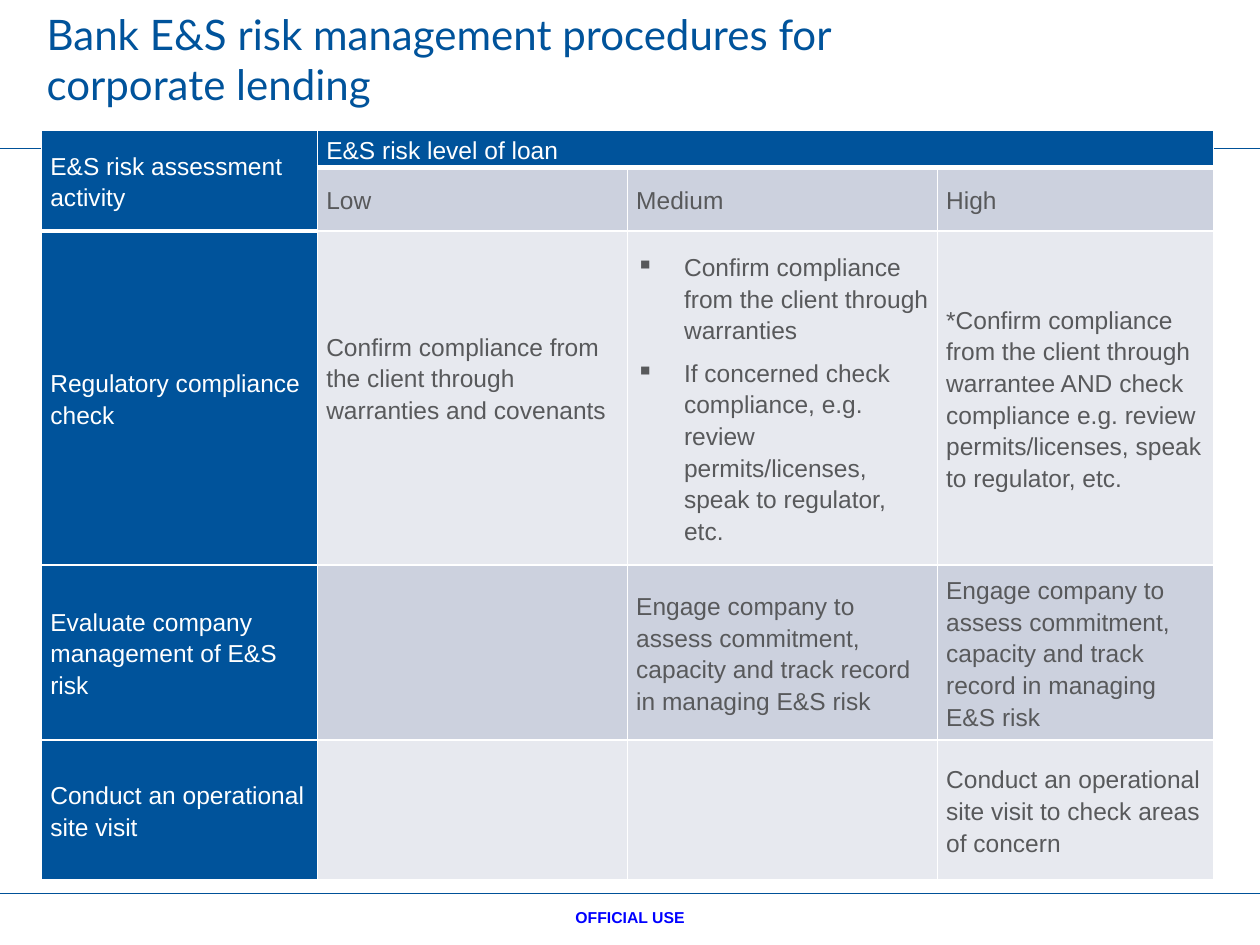
import pptx
import pptx.util
import pptx.dml.color
import pptx.enum.shapes
import pptx.enum.text
import pptx.oxml.ns
from lxml import etree

Inches, Pt = pptx.util.Inches, pptx.util.Pt
qn = pptx.oxml.ns.qn
MIDDLE = pptx.enum.text.MSO_ANCHOR.MIDDLE

BLUE, RULE, GREY, WHITE = "00539B", "005198", "58595B", "FFFFFF"
BANDS = ["CCD1DE", "E7E9EF"]
TITLE = "Bank E&S risk management procedures for corporate lending"
FOOTER = "OFFICIAL USE"
ENGAGE = "Engage company to assess commitment, capacity and track record in managing E&S risk"
ROWS = [
    ["E&S risk assessment activity", "E&S risk level of loan", "", ""],
    ["", "Low", "Medium", "High"],
    ["Regulatory compliance check",
     "Confirm compliance from the client through warranties and covenants",
     ["Confirm compliance from the client through warranties",
      "If concerned check compliance, e.g. review permits/licenses, speak to regulator, etc."],
     "*Confirm compliance from the client through warrantee AND check compliance e.g. "
     "review permits/licenses, speak to regulator, etc."],
    ["Evaluate company management of E&S risk", "", ENGAGE, ENGAGE],
    ["Conduct an operational site visit", "", "",
     "Conduct an operational site visit to check areas of concern"],
]
COL_WIDTHS = [2.19, 2.46, 2.46, 2.19]
ROW_HEIGHTS = [0.3, 0.26, 2.65, 1.39, 1.11]
RULES_Y = [1.18, 7.09]


def rgb(value):
    return pptx.dml.color.RGBColor.from_string(value)


def style_font(font, name, size, color, bold=False):
    font.name, font.size, font.bold = name, Pt(size), bold
    font.color.rgb = rgb(color)


def set_frame(tf):
    tf.word_wrap = True
    tf.vertical_anchor = MIDDLE
    tf.margin_left = tf.margin_right = tf.margin_top = tf.margin_bottom = 0


def add_rule(slide, y):
    line = slide.shapes.add_connector(
        pptx.enum.shapes.MSO_CONNECTOR.STRAIGHT, 0, Inches(y), Inches(10), Inches(y))
    line.line.color.rgb = rgb(RULE)
    line.line.width = Pt(0.25)
    etree.SubElement(line._element.spPr, qn("a:effectLst"))


def set_borders(cell, bottom):
    tcPr = cell._tc.get_or_add_tcPr()
    for side, width in (("L", 1), ("R", 1), ("T", 1), ("B", bottom)):
        ln = etree.SubElement(tcPr, qn(f"a:ln{side}"), w=str(Pt(width)))
        fill = etree.SubElement(ln, qn("a:solidFill"))
        etree.SubElement(fill, qn("a:srgbClr"), val=WHITE)


def add_bullet(p):
    pPr = p._p.get_or_add_pPr()
    pPr.set("marL", str(Inches(0.38)))
    pPr.set("indent", str(-Inches(0.38)))
    etree.SubElement(pPr, qn("a:buChar"), char="▪")


def fill_cell(cell, content, row, col):
    header = row == 0 or col == 0
    set_borders(cell, 3 if row == 0 else 1)
    cell.fill.solid()
    cell.fill.fore_color.rgb = rgb(BLUE if header else BANDS[(row + 1) % 2])
    cell.vertical_anchor = MIDDLE
    cell.margin_left = cell.margin_right = Inches(0.07)
    cell.margin_top = cell.margin_bottom = 0
    if not content:
        return
    bulleted = isinstance(content, list)
    tf = cell.text_frame
    tf.text = "\n".join(content) if bulleted else content
    for p in tf.paragraphs:
        p.line_spacing = 1.15
        p.space_after = Pt(6)
        if bulleted:
            add_bullet(p)
        for r in p.runs:
            style_font(r.font, "Arial", 14, WHITE if header else GREY)


prs = pptx.Presentation()
prs.slide_width, prs.slide_height = Inches(10), Inches(7.5)
slide = prs.slides.add_slide(prs.slide_layouts[5])

for y in RULES_Y:
    add_rule(slide, y)

title = slide.shapes.title
title.left, title.top, title.width, title.height = (
    Inches(v) for v in (0.37, 0, 6.93, 0.93))
title.text_frame.text = TITLE
set_frame(title.text_frame)
p = title.text_frame.paragraphs[0]
p.alignment = pptx.enum.text.PP_ALIGN.LEFT
style_font(p.runs[0].font, "Lato", 24, BLUE)

table = slide.shapes.add_table(
    len(ROWS), len(COL_WIDTHS), Inches(0.33), Inches(1.03),
    Inches(sum(COL_WIDTHS)), Inches(sum(ROW_HEIGHTS))).table
for column, width in zip(table.columns, COL_WIDTHS):
    column.width = Inches(width)
for table_row, height in zip(table.rows, ROW_HEIGHTS):
    table_row.height = Inches(height)
for row, contents in enumerate(ROWS):
    for col, content in enumerate(contents):
        fill_cell(table.cell(row, col), content, row, col)
table.cell(0, 0).merge(table.cell(1, 0))
table.cell(0, 1).merge(table.cell(0, 3))
table.cell(2, 1).margin_bottom = Inches(0.33)

footer = slide.shapes.add_textbox(0, Inches(7.08), Inches(10), Inches(0.4))
footer.text_frame.text = FOOTER
set_frame(footer.text_frame)
p = footer.text_frame.paragraphs[0]
p.alignment = pptx.enum.text.PP_ALIGN.CENTER
style_font(p.runs[0].font, "Arial", 9, "0000FF", True)

prs.save("out.pptx")
